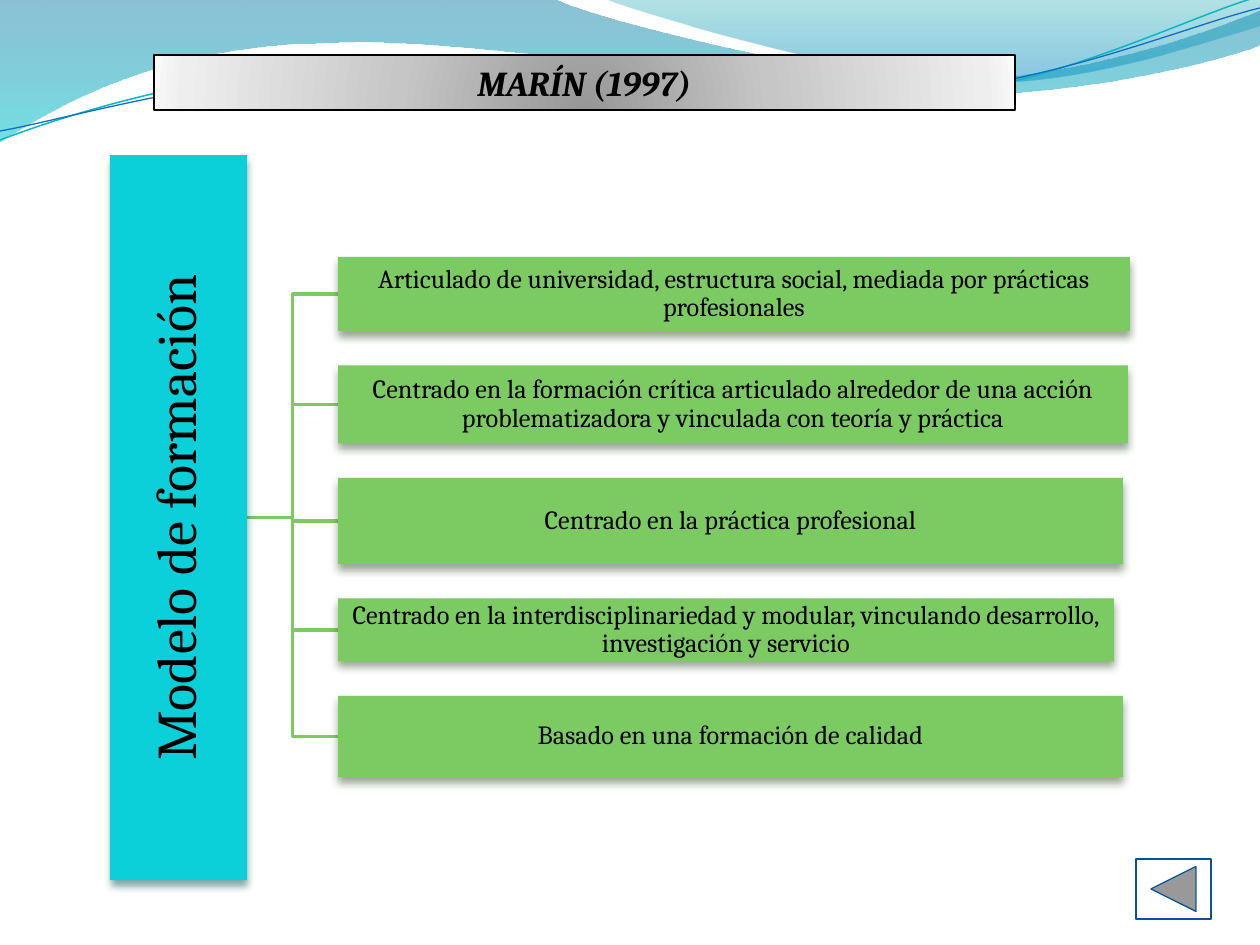
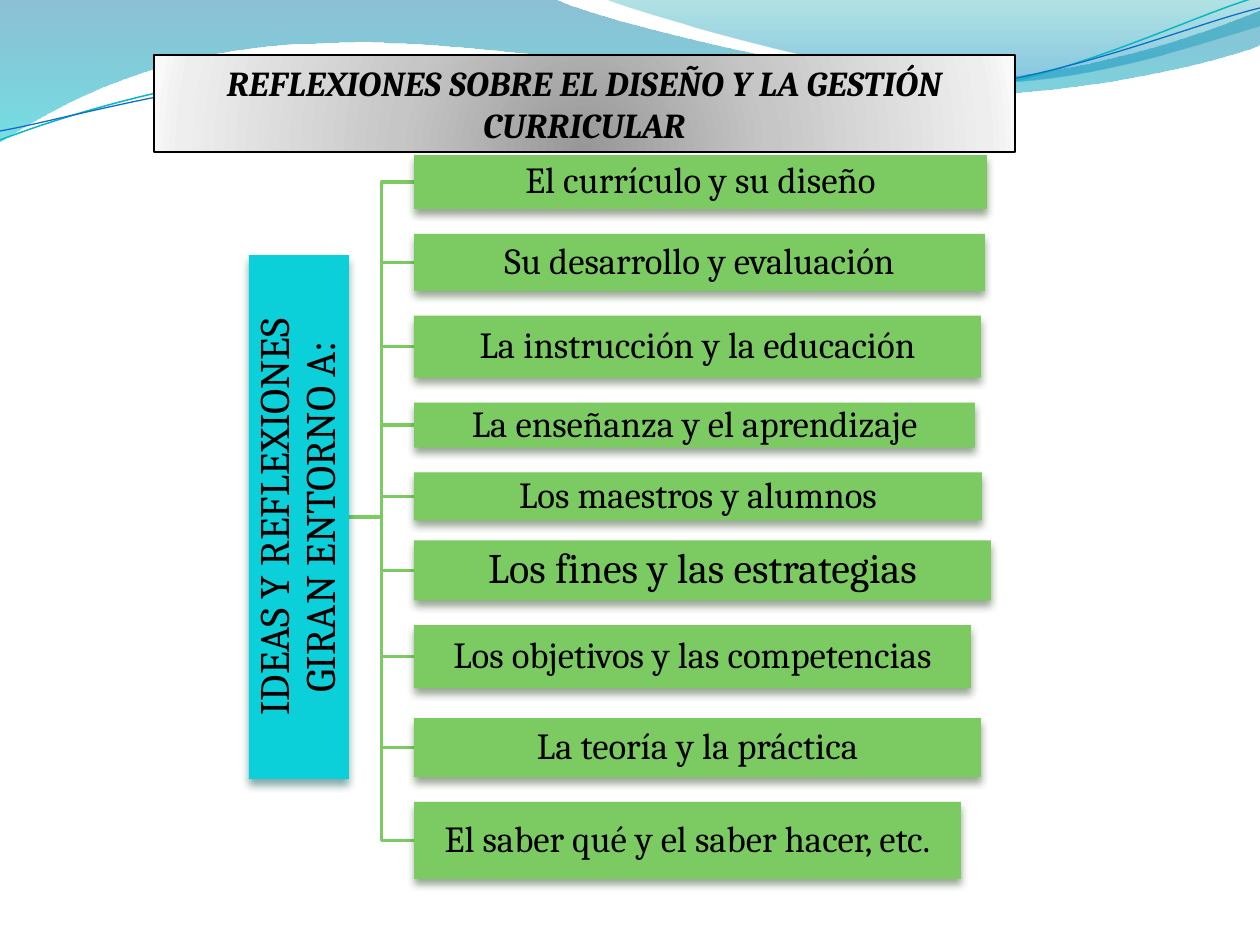
from pptx import Presentation
from pptx.dml.color import RGBColor
from pptx.enum.shapes import MSO_SHAPE
from pptx.enum.text import MSO_ANCHOR, MSO_AUTO_SIZE, PP_ALIGN
from pptx.oxml import parse_xml
from pptx.oxml.ns import nsdecls, qn
from pptx.util import Pt

EMU_PER_PX = 914400 / 126
PAGE_WIDTH, PAGE_HEIGHT = 1260, 945
TITLE_ONLY = 5

# Shared look
BLACK = RGBColor(0x00, 0x00, 0x00)
WHITE = RGBColor(0xFF, 0xFF, 0xFF)
GREEN = RGBColor(0x7C, 0xCA, 0x62)
GREEN_SHADOW = RGBColor(0x2B, 0x48, 0x21)
CYAN = RGBColor(0x0B, 0xD0, 0xD9)
CYAN_SHADOW = RGBColor(0x02, 0x4B, 0x4E)
NAVY = RGBColor(0x09, 0x52, 0x95)
TEAL_LINE = RGBColor(0x0A, 0xB8, 0xBF)
BLUE_LINE = RGBColor(0x0F, 0x6F, 0xC6)

FONT = {"name": "Cambria"}
TITLE_FONT = {"size": Pt(20), "bold": True, "italic": True}
TITLE_LEFT, TITLE_TOP, TITLE_WIDTH = 154, 55, 861

# Gradient stops: position %, colour, opacity %
DOWNWARD = '<a:lin ang="5400000" scaled="1"/>'
FROM_CENTRE = ('<a:path path="circle"><a:fillToRect l="50000" t="130000" '
               'r="50000" b="-30000"/></a:path>')
TITLE_STOPS = [(0, RGBColor(0x97, 0x97, 0x97), 100), (43, RGBColor(0xC6, 0xC6, 0xC6), 100),
               (93, RGBColor(0xEE, 0xEE, 0xEE), 100), (100, RGBColor(0xF9, 0xF9, 0xF9), 100)]
LEFT_WAVE_STOPS = [(0, RGBColor(0x00, 0x74, 0xA1), 45), (100, RGBColor(0x00, 0xC6, 0xCF), 55)]
RIGHT_WAVE_STOPS = [(0, RGBColor(0x00, 0xA1, 0xA9), 30), (80, RGBColor(0x00, 0x8B, 0xBF), 45)]

# Waves: points are line ends (2 numbers) or Bezier curves (6 numbers)
WAVE_BANDS = [
    (LEFT_WAVE_STOPS, [
        (0, 0), (554, -1), (600, 21, 837, 79, 955, 79), (1074, 79, 1207, 33, 1260, 11),
        (1261, 45), (1239, 55, 1096, 96, 940, 95), (784, 95, 481, 35, 324, 43),
        (163, 45, 58, 105, -1, 142)]),
    (RIGHT_WAVE_STOPS, [
        (604, -1), (641, 14, 859, 78, 969, 82), (1079, 87, 1211, 40, 1260, 26), (1260, 0)]),
]
WAVE_LINES = [
    (TEAL_LINE, 0.85, [
        (0, 140), (60, 117, 199, 72, 349, 66), (498, 59, 747, 112, 898, 101),
        (1050, 89, 1182, 19, 1257, -3)]),
    (BLUE_LINE, 0.75, [
        (0, 131), (59, 121, 207, 77, 357, 71), (508, 64, 752, 106, 903, 95),
        (1053, 84, 1186, 26, 1260, 8)]),
]

# Slide content; items: text, width, height and optional lift and font size
PAGES = [
    {
        "title": "MARÍN (1997)", "title_height": 55,
        "root": "Modelo de formación", "root_box": (110, 155, 137, 725), "root_size": 32,
        "items_left": 338, "items_top": 257, "items_bottom": 777, "item_size": 15,
        "items": [
            ("Articulado de universidad, estructura social, mediada por prácticas profesionales", 792, 74),
            ("Centrado en la formación crítica articulado alrededor de una acción "
             "problematizadora y vinculada con teoría y práctica", 790, 78),
            ("Centrado en la práctica profesional", 785, 86),
            ("Centrado en la interdisciplinariedad y modular, vinculando desarrollo, "
             "investigación y servicio", 776, 63),
            ("Basado en una formación de calidad", 785, 81),
        ],
        "back_button": (1136, 859, 75, 60),
    },
    {
        "title": "REFLEXIONES SOBRE EL DISEÑO Y LA GESTIÓN CURRICULAR", "title_height": 97,
        "root": "IDEAS Y REFLEXIONES GIRAN ENTORNO A:", "root_box": (249, 255, 100, 524),
        "root_size": 24,
        "items_left": 414, "items_top": 155, "items_bottom": 879, "item_size": 21,
        "items": [
            ("El currículo y su diseño", 573, 54),
            ("Su desarrollo y evaluación", 571, 57),
            ("La instrucción y la educación", 567, 62),
            ("La enseñanza y el aprendizaje", 561, 45),
            ("Los maestros y alumnos", 568, 48),
            ("Los fines y las estrategias", 577, 60, 5, 24),
            ("Los objetivos y las competencias", 557, 63, 5),
            ("La teoría y la práctica", 567, 59),
            ("El saber qué y el saber hacer, etc.", 547, 77),
        ],
    },
]


def px(length):
    return round(length * EMU_PER_PX)


def set_all(target, values):
    for name, value in values.items():
        setattr(target, name, value)


def fill_solid(shape, color):
    shape.fill.solid()
    shape.fill.fore_color.rgb = color


def fill_gradient(shape, stops, direction):
    stop_xml = "".join(
        f'<a:gs pos="{position * 1000}"><a:srgbClr val="{color}">'
        f'<a:alpha val="{opacity * 1000}"/></a:srgbClr></a:gs>'
        for position, color, opacity in stops)
    shape.fill.background()
    properties = shape.element.spPr
    properties.replace(properties.find(qn("a:noFill")), parse_xml(
        f'<a:gradFill {nsdecls("a")} rotWithShape="1"><a:gsLst>{stop_xml}</a:gsLst>'
        f'{direction}</a:gradFill>'))


def set_line(shape, color, width):
    shape.line.color.rgb = color
    shape.line.width = Pt(width)


def add_shadow(shape, color):
    shape.shadow.inherit = False
    shape.element.spPr.find(qn("a:effectLst")).append(parse_xml(
        f'<a:outerShdw {nsdecls("a")} blurRad="{Pt(4.5)}" dist="{Pt(3)}" dir="5400000" '
        f'rotWithShape="0"><a:srgbClr val="{color}"><a:alpha val="48000"/></a:srgbClr>'
        '</a:outerShdw>'))


def write(shape, text, font, margins, spacing=None):
    frame = shape.text_frame
    set_all(frame, {"word_wrap": True, "auto_size": MSO_AUTO_SIZE.NONE,
                    "vertical_anchor": MSO_ANCHOR.MIDDLE,
                    "margin_left": px(margins[0]), "margin_right": px(margins[0]),
                    "margin_top": px(margins[1]), "margin_bottom": px(margins[1])})
    para = frame.paragraphs[0]
    set_all(para, {"alignment": PP_ALIGN.CENTER, "line_spacing": spacing})
    span = para.add_run()
    span.text = text
    set_all(span.font, {**FONT, **font})
    span.font.color.rgb = BLACK


def bend_curves(shape, segments):
    """Merge the three straight steps of each Bezier segment into one curve."""
    steps = iter(list(shape.element.spPr.iter(qn("a:lnTo"))))
    for segment in segments:
        first = next(steps)
        if len(segment) == 6:
            curve = parse_xml(f'<a:cubicBezTo {nsdecls("a")}/>')
            first.addprevious(curve)
            for step in (first, next(steps), next(steps)):
                curve.append(step[0])
                step.getparent().remove(step)


def add_outline(page, points, close):
    places = [(px(point[i]), px(point[i + 1]))
              for point in points for i in range(0, len(point), 2)]
    builder = page.shapes.build_freeform(*places[0], scale=1.0)
    builder.add_line_segments(places[1:], close=close)
    shape = builder.convert_to_shape()
    bend_curves(shape, points[1:])
    shape.shadow.inherit = False
    shape.fill.background()
    return shape


def add_box(page, kind, left, top, width, height):
    return page.shapes.add_shape(kind, px(left), px(top), px(width), px(height))


def add_waves(page, layout):
    """Draw the waves, then move them to the layout that all slides share."""
    waves = []
    for stops, points in WAVE_BANDS:
        band = add_outline(page, points, True)
        fill_gradient(band, stops, DOWNWARD)
        band.line.fill.background()
        waves.append(band)
    for color, width, points in WAVE_LINES:
        curve = add_outline(page, points, False)
        set_line(curve, color, width)
        waves.append(curve)
    for position, wave in enumerate(waves, start=2):
        layout.shapes.element.insert(position, wave.element)


def add_title(page, content):
    title = page.shapes.title
    set_all(title, {"left": px(TITLE_LEFT), "top": px(TITLE_TOP),
                    "width": px(TITLE_WIDTH), "height": px(content["title_height"])})
    fill_gradient(title, TITLE_STOPS, FROM_CENTRE)
    set_line(title, BLACK, 0.75)
    write(title, content["title"], TITLE_FONT, (13, 6))


def place_items(content):
    """Give each item its box, with equal gaps between top and bottom."""
    items = content["items"]
    top, bottom = content["items_top"], content["items_bottom"]
    gap = (bottom - top - sum(item[2] for item in items)) / (len(items) - 1)
    for text, width, height, *extra in items:
        lift = extra[0] if extra else 0
        size = extra[1] if len(extra) > 1 else content["item_size"]
        yield text, size, (content["items_left"], top - lift, width, height)
        top += height + gap


def add_tree(page, content):
    left, top, width, height = content["root_box"]
    right, middle = left + width, top + height / 2
    placed = list(place_items(content))

    # Branches, behind the boxes
    for _, _, (item_left, item_top, _, item_height) in reversed(placed):
        bend, target = (right + item_left) / 2, item_top + item_height / 2
        branch = add_outline(page, [(right, middle), (bend, middle), (bend, target),
                                    (item_left, target)], False)
        set_line(branch, GREEN, 2)

    # Root, turned to read upwards
    centre = left + width / 2
    root = add_box(page, MSO_SHAPE.RECTANGLE, centre - height / 2, middle - width / 2, height, width)
    root.rotation = 270
    boxes = [(root, content["root"], content["root_size"], CYAN, CYAN_SHADOW)]

    # Items
    for text, size, place in placed:
        item = add_box(page, MSO_SHAPE.RECTANGLE, *place)
        boxes.append((item, text, size, GREEN, GREEN_SHADOW))
    for box, text, size, color, shadow in boxes:
        fill_solid(box, color)
        box.line.fill.background()
        add_shadow(box, shadow)
        write(box, text, {"size": Pt(size)}, (2, 2), 0.9)


def add_back_button(page, place):
    button = add_box(page, MSO_SHAPE.ACTION_BUTTON_BACK_OR_PREVIOUS, *place)
    button.shadow.inherit = False
    fill_solid(button, WHITE)
    set_line(button, NAVY, 0.75)


def main():
    deck = Presentation()
    set_all(deck, {"slide_width": px(PAGE_WIDTH), "slide_height": px(PAGE_HEIGHT)})
    layout = deck.slide_layouts[TITLE_ONLY]
    for number, content in enumerate(PAGES):
        page = deck.slides.add_slide(layout)
        if number == 0:
            add_waves(page, layout)
        add_title(page, content)
        add_tree(page, content)
        if "back_button" in content:
            add_back_button(page, content["back_button"])
    deck.save("out.pptx")


if __name__ == "__main__":
    main()
